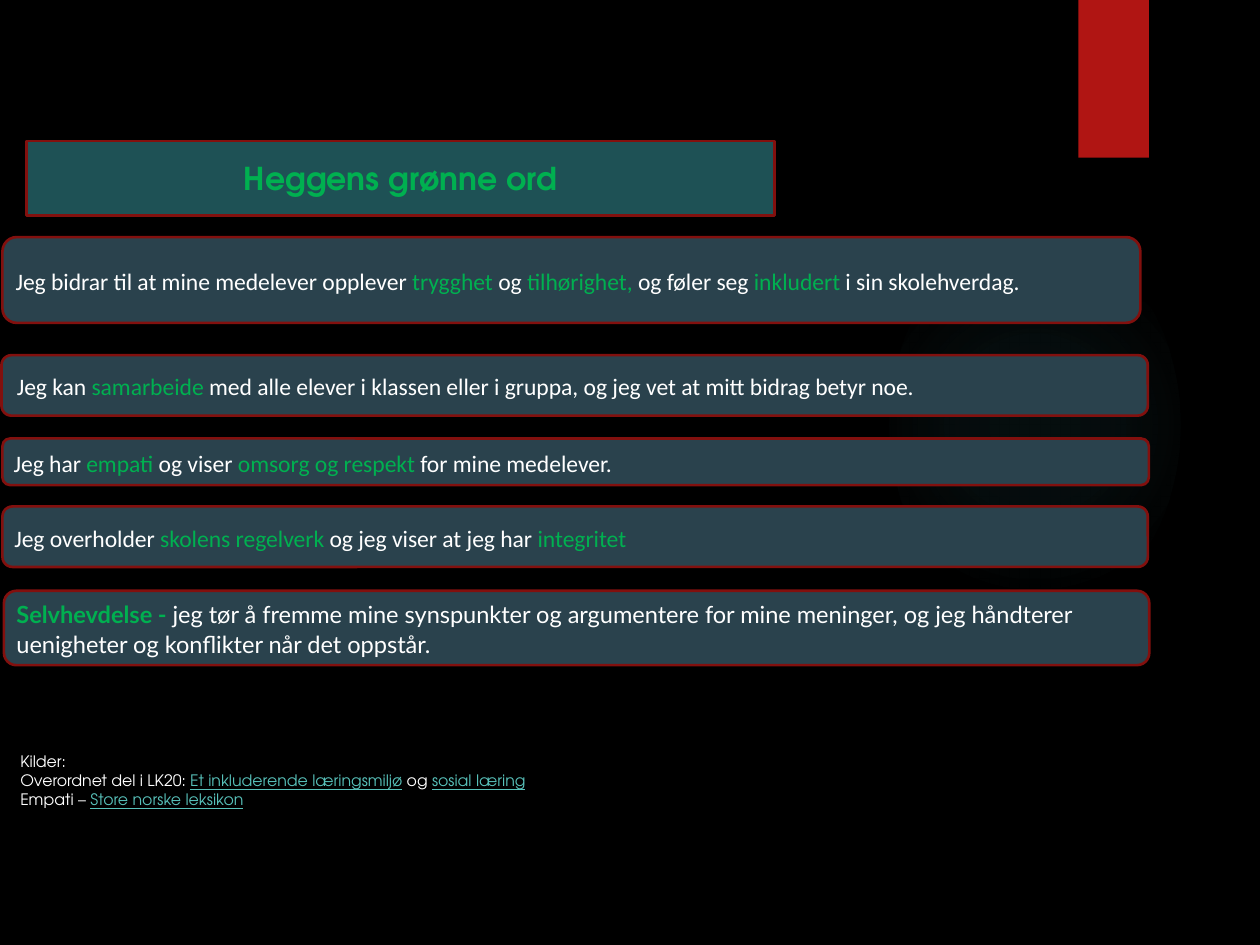
from lxml import etree
from pptx import Presentation
from pptx.dml.color import RGBColor
from pptx.enum.shapes import MSO_SHAPE
from pptx.enum.text import MSO_ANCHOR, MSO_AUTO_SIZE, PP_ALIGN
from pptx.oxml import parse_xml
from pptx.oxml.ns import nsdecls, qn
from pptx.util import Cm, Pt

ROUNDED, RECTANGLE, OVAL = MSO_SHAPE.ROUNDED_RECTANGLE, MSO_SHAPE.RECTANGLE, MSO_SHAPE.OVAL
MIDDLE, NO_FIT, GROW = MSO_ANCHOR.MIDDLE, MSO_AUTO_SIZE.NONE, MSO_AUTO_SIZE.SHAPE_TO_FIT_TEXT
LEFT, CENTER = PP_ALIGN.LEFT, PP_ALIGN.CENTER

WHITE, GREEN, LINK = "FFFFFF", "00B050", "58C1BA"
BORDER, PANEL, TITLE_PANEL = "82100E", "2A424D", "1E5155"
GLOW, RIBBON, BLACK = "50B9C1", "B01513", "000000"
HEADING_FONT, BODY_FONT, ASSERTION_FONT = "TeX Gyre Adventor", "Calibri", "Lato"

NARROW = (0.18, 0.1)
WIDE = (0.25, 0.13)

# Each statement: box, insets, font, and runs as (text, is key word).
STATEMENTS = [
    ((0.05, 4.78, 22.94, 1.73), NARROW, BODY_FONT,
     [("Jeg bidrar til at mine medelever opplever ", False), ("trygghet", True),
      (" og ", False), ("tilhørighet,", True), (" og føler seg ", False),
      ("inkludert", True), (" i sin skolehverdag.", False)]),
    ((0.03, 7.16, 23.11, 1.22), WIDE, BODY_FONT,
     [("Jeg kan ", False), ("samarbeide ", True),
      ("med alle elever i klassen eller i gruppa, og jeg vet at mitt bidrag betyr noe.", False)]),
    ((0.05, 8.84, 23.11, 0.94), NARROW, BODY_FONT,
     [("Jeg har\u00a0", False), ("empati ", True), ("og viser", False),
      (" omsorg og respekt ", True), ("for mine medelever.", False)]),
    ((0.05, 10.21, 23.09, 1.22), NARROW, BODY_FONT,
     [("Jeg overholder ", False), ("skolens regelverk ", True),
      ("og jeg viser at jeg har ", False), ("integritet", True)]),
    ((0.08, 11.91, 23.09, 1.5), NARROW, ASSERTION_FONT,
     [("Selvhevdelse - ", True),
      ("jeg tør å fremme mine synspunkter og argumentere for mine meninger, "
       "og jeg håndterer uenigheter og konflikter når det oppstår.", False)]),
]

# Each source line: runs as (text, is link).
SOURCES = [
    [("Kilder:", False)],
    [("Overordnet del i LK20: ", False), ("Et inkluderende læringsmiljø", True),
     (" og ", False), ("sosial læring", True)],
    [("Empati – ", False), ("Store norske leksikon", True)],
]


def color(value):
    """Turn a hex string into a colour."""
    return RGBColor.from_string(value)


def cm_box(box):
    """Turn left, top, width and height into lengths."""
    return [Cm(value) for value in box]


def style_panel(panel, fill, border=None):
    """Give a panel a flat fill and an optional border."""
    panel.shadow.inherit = False
    panel.fill.solid()
    panel.fill.fore_color.rgb = color(fill)
    if border:
        panel.line.color.rgb = color(border)
        panel.line.width = Pt(1.5)
    else:
        panel.line.fill.background()


def set_frame(frame, insets, anchor=None):
    """Set the wrapping, insets and anchor of a text frame."""
    frame.word_wrap = True
    frame.margin_left = frame.margin_right = Cm(insets[0])
    frame.margin_top = frame.margin_bottom = Cm(insets[1])
    if anchor is not None:
        frame.vertical_anchor = anchor


def add_run(paragraph, text, font, size, fill, bold=False, underline=False):
    """Add a formatted run to a paragraph."""
    run = paragraph.add_run()
    run.text = text
    run.font.name = font
    run.font.size = Pt(size)
    run.font.color.rgb = color(fill)
    run.font.bold = bold
    run.font.underline = underline


def add_glow(slide, box):
    """Add a faint round glow that fades outwards."""
    glow = slide.shapes.add_shape(OVAL, *cm_box(box))
    style_panel(glow, GLOW)
    stops = "".join(
        f'<a:gs pos="{pos}000"><a:srgbClr val="{GLOW}"><a:alpha val="{alpha}000"/></a:srgbClr></a:gs>'
        for pos, alpha in ((0, 7), (36, 6), (69, 0), (100, 0)))
    gradient = parse_xml(
        f'<a:gradFill {nsdecls("a")} rotWithShape="1"><a:gsLst>{stops}</a:gsLst><a:path path="circle">'
        '<a:fillToRect l="50000" t="50000" r="50000" b="50000"/></a:path></a:gradFill>')
    properties = glow.element.spPr
    properties.replace(properties.find(qn("a:solidFill")), gradient)


def add_ribbon(slide, box):
    """Add the ribbon hanging from the top edge."""
    style_panel(slide.shapes.add_shape(RECTANGLE, *cm_box(box)), RIBBON)


def set_title(slide, text, box):
    """Turn the title placeholder into a rounded heading panel."""
    title = slide.shapes.title
    title.left, title.top, title.width, title.height = cm_box(box)
    outline = etree.SubElement(title.element.spPr, qn("a:prstGeom"), prst="roundRect")
    etree.SubElement(outline, qn("a:avLst"))
    style_panel(title, TITLE_PANEL, BORDER)
    set_frame(title.text_frame, NARROW, MIDDLE)
    title.text_frame.auto_size = NO_FIT
    paragraph = title.text_frame.paragraphs[0]
    paragraph.alignment = CENTER
    add_run(paragraph, text, HEADING_FONT, 18, GREEN, bold=True)


def add_statement(slide, box, insets, font, runs):
    """Add a rounded panel with a statement and its green key words."""
    panel = slide.shapes.add_shape(ROUNDED, *cm_box(box))
    style_panel(panel, PANEL, BORDER)
    set_frame(panel.text_frame, insets, MIDDLE)
    paragraph = panel.text_frame.paragraphs[0]
    paragraph.alignment = LEFT
    paragraph.line_spacing = 1.07
    paragraph.space_after = Pt(6)
    for text, is_key in runs:
        add_run(paragraph, text, font, 13.5, GREEN if is_key else WHITE,
                bold=is_key and font == ASSERTION_FONT)


def add_sources(slide, box):
    """Add the list of sources with underlined titles."""
    frame = slide.shapes.add_textbox(*cm_box(box)).text_frame
    set_frame(frame, NARROW)
    frame.auto_size = GROW
    for index, runs in enumerate(SOURCES):
        paragraph = frame.add_paragraph() if index else frame.paragraphs[0]
        for text, is_link in runs:
            add_run(paragraph, text, HEADING_FONT, 9, LINK if is_link else WHITE, underline=is_link)


def main():
    """Build the slide and save it."""
    deck = Presentation()
    deck.slide_width, deck.slide_height = Cm(25.4), Cm(19.05)
    slide = deck.slides.add_slide(deck.slide_layouts[5])
    slide.background.fill.solid()
    slide.background.fill.fore_color.rgb = color(BLACK)
    add_glow(slide, (17.93, 4.65, 5.87, 7.82))
    add_ribbon(slide, (21.74, 0, 1.42, 3.18))
    set_title(slide, "Heggens grønne ord", (0.53, 2.84, 15.09, 1.5))
    for statement in STATEMENTS:
        add_statement(slide, *statement)
    add_sources(slide, (0.23, 15.06, 22.73, 1.35))
    deck.save("out.pptx")


if __name__ == "__main__":
    main()
